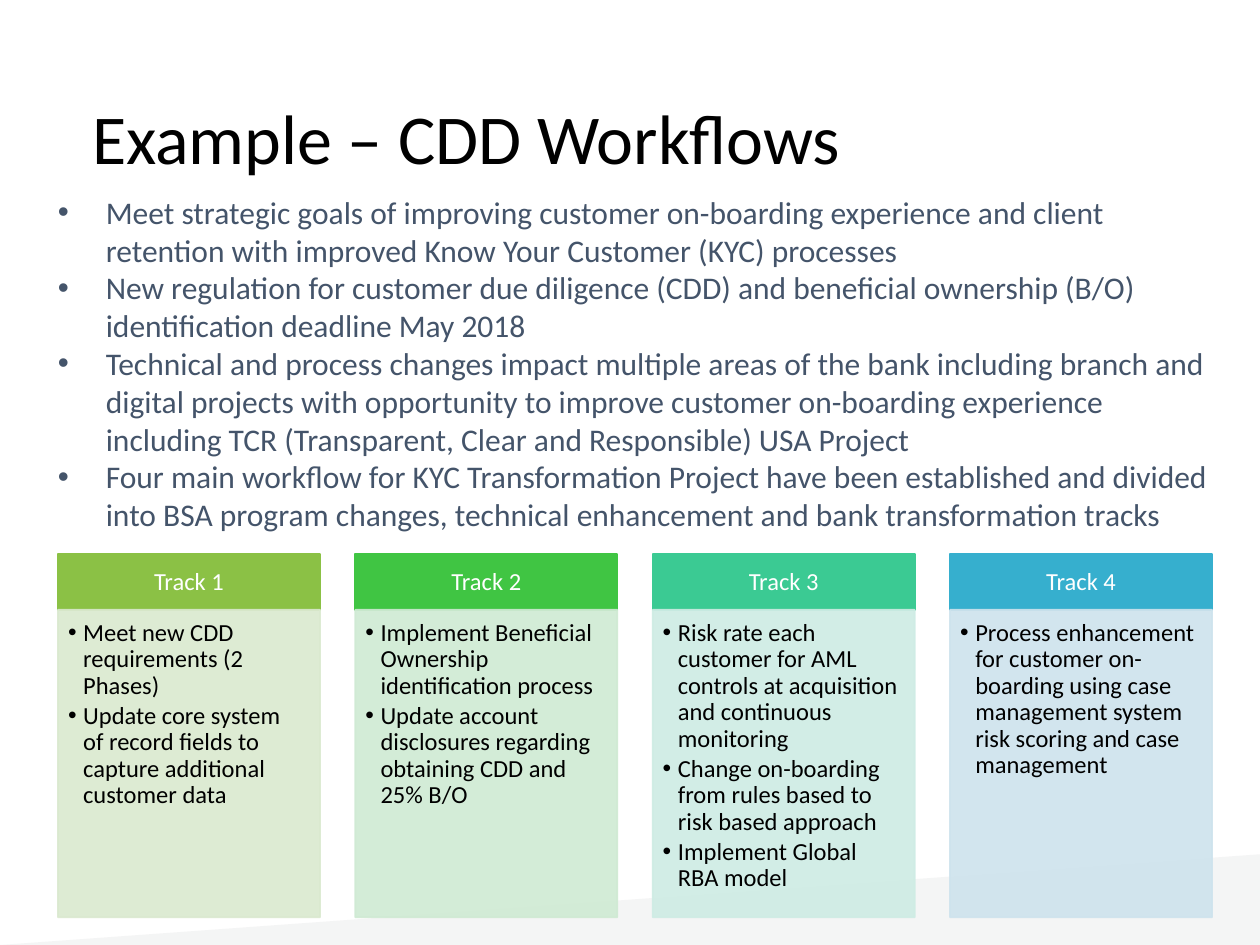
from dataclasses import dataclass

from lxml.etree import SubElement
from pptx import Presentation
from pptx.dml.color import RGBColor
from pptx.enum.shapes import MSO_SHAPE as Shape
from pptx.enum.text import MSO_ANCHOR as Anchor, MSO_AUTO_SIZE as AutoSize, PP_ALIGN as Align
from pptx.oxml.ns import qn
from pptx.util import Inches, Pt


@dataclass(frozen=True)
class Theme:
    font: str = "Calibri"
    title_size: int = 40
    body_size: int = 18
    card_size: int = 14
    black: str = "000000"
    white: str = "FFFFFF"
    slate: str = "44546A"
    wedge: str = "DCDEE0"


@dataclass(frozen=True)
class Track:
    name: str
    head_color: str
    body_color: str
    items: tuple[str, ...]


THEME = Theme()
TITLE = "Example – CDD Workflows"
GOALS = (
    "Meet strategic goals of improving customer on-boarding experience and client retention "
    "with improved Know Your Customer (KYC) processes",
    "New regulation for customer due diligence (CDD) and beneficial ownership (B/O) "
    "identification deadline May 2018",
    "Technical and process changes impact multiple areas of the bank including branch and "
    "digital projects with opportunity to improve customer on-boarding experience including "
    "TCR (Transparent, Clear and Responsible) USA Project",
    "Four main workflow for KYC Transformation Project have been established and divided into "
    "BSA program changes, technical enhancement and bank transformation tracks",
)
TRACKS = (
    Track("Track 1", "8BC145", "DAE9CF", (
        "Meet new CDD requirements (2 Phases)",
        "Update core system of record fields to capture additional customer data")),
    Track("Track 2", "40C543", "CFEAD3", (
        "Implement Beneficial Ownership identification process",
        "Update account disclosures regarding obtaining CDD and 25% B/O")),
    Track("Track 3", "3BCA93", "CEECE4", (
        "Risk rate each customer for AML controls at acquisition and continuous monitoring",
        "Change on-boarding from rules based to risk based approach",
        "Implement Global RBA model")),
    Track("Track 4", "36AFCE", "CEE3ED", (
        "Process enhancement for customer on-boarding using case management system risk "
        "scoring and case management",)),
)
CARD_LEFT, CARD_STEP, CARD_WIDTH = 0.46, 2.36, 2.08
HEAD_TOP, HEAD_HEIGHT, BODY_HEIGHT = 4.4, 0.44, 2.44


def place(sp, left: float, top: float, width: float, height: float) -> None:
    sp.left, sp.top, sp.width, sp.height = map(Inches, (left, top, width, height))


def set_frame(tf, anchor, insets: tuple[float, float, float, float]) -> None:
    tf.word_wrap = True
    tf.auto_size = AutoSize.NONE
    tf.vertical_anchor = anchor
    tf.margin_left, tf.margin_top, tf.margin_right, tf.margin_bottom = map(Inches, insets)


def write(tf, lines: tuple[str, ...], size: int, color: str, align=Align.LEFT,
          spacing: float = 1.0, after: float = 0, indent: float = 0) -> None:
    """Fill the frame with one paragraph a line, bulleted when an indent is given."""
    tf.text = "\n".join(lines)
    for p in tf.paragraphs:
        p.alignment, p.line_spacing = align, spacing
        p.space_before, p.space_after = Pt(0), Pt(after)
        if indent:
            pPr = p._p.get_or_add_pPr()
            pPr.set("marL", str(Inches(indent)))
            pPr.set("indent", str(-Inches(indent)))
            SubElement(pPr, qn("a:buFont"), typeface="Arial")
            SubElement(pPr, qn("a:buChar"), char="•")
        for r in p.runs:
            r.font.name, r.font.size = THEME.font, Pt(size)
            r.font.color.rgb = RGBColor.from_string(color)


def set_opacity(sp, percent: int) -> None:
    for color in sp._element.spPr.iter(qn("a:srgbClr")):
        SubElement(color, qn("a:alpha"), val=str(percent * 1000))


def paint(sp, color: str) -> None:
    sp.shadow.inherit = False
    sp.fill.solid()
    sp.fill.fore_color.rgb = RGBColor.from_string(color)


def add_wedge(slide) -> None:
    corners = [(Inches(x), Inches(y)) for x, y in ((10, 6.78), (0, 7.5), (10, 7.5))]
    builder = slide.shapes.build_freeform(*corners[0])
    builder.add_line_segments(corners[1:], close=True)
    sp = builder.convert_to_shape()
    paint(sp, THEME.wedge)
    sp.line.fill.background()
    set_opacity(sp, 30)


def add_box(slide, left: float, top: float, height: float, color: str):
    sp = slide.shapes.add_shape(
        Shape.RECTANGLE, *map(Inches, (left, top, CARD_WIDTH, height)))
    paint(sp, color)
    sp.line.color.rgb = RGBColor.from_string(color)
    sp.line.width = Pt(1)
    return sp


def add_track(slide, left: float, track: Track) -> None:
    head = add_box(slide, left, HEAD_TOP, HEAD_HEIGHT, track.head_color)
    set_frame(head.text_frame, Anchor.MIDDLE, (0.11, 0.06, 0.11, 0.06))
    write(head.text_frame, (track.name,), THEME.card_size, THEME.white, Align.CENTER, 0.9)

    body = add_box(slide, left, HEAD_TOP + HEAD_HEIGHT, BODY_HEIGHT, track.body_color)
    set_opacity(body, 90)
    set_frame(body.text_frame, Anchor.TOP, (0.08, 0.08, 0.11, 0.12))
    write(body.text_frame, track.items, THEME.card_size, THEME.black,
          spacing=0.9, after=2.1, indent=0.12)


def main() -> None:
    prs = Presentation()
    prs.slide_width, prs.slide_height = Inches(10), Inches(7.5)
    slide = prs.slides.add_slide(prs.slide_layouts[1])
    title, goals = slide.placeholders

    place(title, 0.69, 0.8, 8.62, 0.65)
    set_frame(title.text_frame, Anchor.MIDDLE, (0.04, 0.02, 0.04, 0.02))
    write(title.text_frame, (TITLE,), THEME.title_size, THEME.black, spacing=0.9)

    place(goals, 0.46, 1.53, 9.15, 2.75)
    set_frame(goals.text_frame, Anchor.TOP, (0, 0, 0, 0))
    write(goals.text_frame, GOALS, THEME.body_size, THEME.slate, indent=0.38)

    add_wedge(slide)
    for i, track in enumerate(TRACKS):
        add_track(slide, CARD_LEFT + i * CARD_STEP, track)
    prs.save("out.pptx")


if __name__ == "__main__":
    main()
